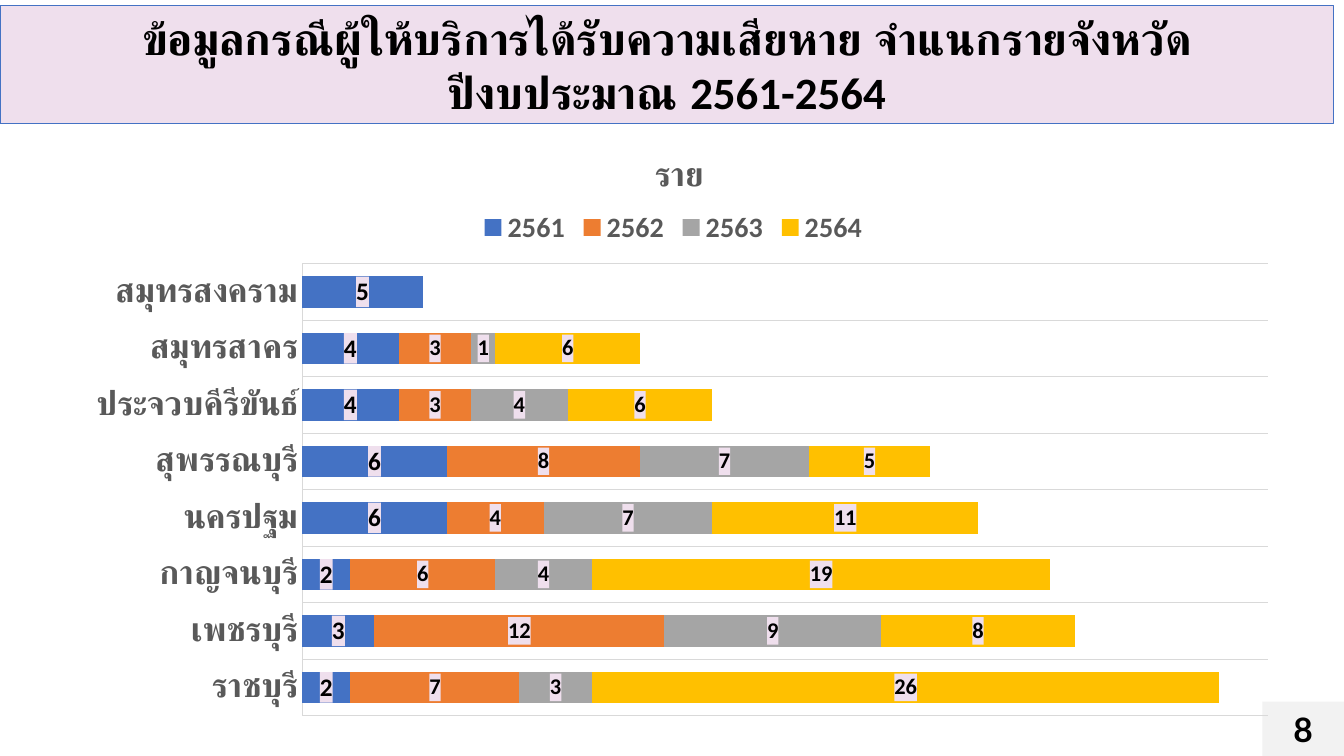
from dataclasses import dataclass

import pptx
import pptx.chart.data
import pptx.dml.color
import pptx.enum.chart
import pptx.enum.shapes
import pptx.enum.text
import pptx.oxml
import pptx.oxml.ns
import pptx.util

COLORS = {
    "black": "000000", "pink": "EFDFED", "blue": "4472C4", "orange": "ED7D31",
    "gray": "A5A5A5", "yellow": "FFC000", "text": "595959", "rule": "D9D9D9",
    "page": "F2F2F2",
}
WIDTH, HEIGHT = pptx.util.Inches(13.33), pptx.util.Inches(7.5)
TITLE = "ข้อมูลกรณีผู้ให้บริการได้รับความเสียหาย จำแนกรายจังหวัด\nปีงบประมาณ 2561-2564"
PROVINCES = ["ราชบุรี", "เพชรบุรี", "กาญจนบุรี", "นครปฐม", "สุพรรณบุรี",
             "ประจวบคีรีขันธ์", "สมุทรสาคร", "สมุทรสงคราม"]


@dataclass
class Box:
    """A rectangle in inches, from the slide's top left corner."""
    left: float
    top: float
    width: float
    height: float

    def emu(self) -> list[int]:
        return [pptx.util.Inches(v) for v in (self.left, self.top, self.width, self.height)]


@dataclass
class Year:
    name: str
    color: str
    label_size: int
    cases: list


TITLE_BOX = Box(0, 0.05, 13.23, 1.18)
PAGE_BOX = Box(12.52, 6.96, 0.81, 0.54)
CHART_BOX = Box(0.54, 1.24, 12.28, 5.98)
YEARS = [
    Year("2561", "blue", 18, [2, 3, 2, 6, 6, 4, 4, 5]),
    Year("2562", "orange", 16, [7, 12, 6, 4, 8, 3, 3, None]),
    Year("2563", "gray", 16, [3, 9, 4, 7, 7, 4, 1, None]),
    Year("2564", "yellow", 16, [26, 8, 19, 11, 5, 6, 6, None]),
]


def rgb(name: str) -> pptx.dml.color.RGBColor:
    return pptx.dml.color.RGBColor.from_string(COLORS[name])


def paint(fill, color: str) -> None:
    fill.solid()
    fill.fore_color.rgb = rgb(color)


def set_font(font, size: int, color: str, name: str = "Calibri") -> None:
    font.size = pptx.util.Pt(size)
    font.bold = True
    font.name = name
    font.color.rgb = rgb(color)


def set_line(line, color: str) -> None:
    line.color.rgb = rgb(color)
    line.width = pptx.util.Pt(0.75)


def write(sp, text: str, size: int, name: str) -> None:
    """Fill a shape with centred bold black text."""
    tf = sp.text_frame
    tf.text = text
    tf.word_wrap = True
    tf.auto_size = pptx.enum.text.MSO_AUTO_SIZE.NONE
    tf.vertical_anchor = pptx.enum.text.MSO_ANCHOR.MIDDLE
    for p in tf.paragraphs:
        p.alignment = pptx.enum.text.PP_ALIGN.CENTER
        p.line_spacing = 1.0
        for r in p.runs:
            set_font(r.font, size, "black", name)


def set_layout(element, index: int, target: str = "", **shares: float) -> None:
    """Place a chart part by shares of the chart's size."""
    for old in element.findall(pptx.oxml.ns.qn("c:layout")):
        element.remove(old)
    parts = {"layoutTarget": target} if target else {}
    parts |= {"xMode": "edge", "yMode": "edge", **shares}
    body = "".join(f'<c:{tag} val="{value}"/>' for tag, value in parts.items())
    element.insert(index, pptx.oxml.parse_xml(
        f'<c:layout {pptx.oxml.ns.nsdecls("c")}>'
        f"<c:manualLayout>{body}</c:manualLayout></c:layout>"))


def add_title(slide) -> None:
    sp = slide.shapes.title
    sp.left, sp.top, sp.width, sp.height = TITLE_BOX.emu()
    paint(sp.fill, "pink")
    set_line(sp.line, "blue")
    write(sp, TITLE, 32, "Calibri")


def add_page_number(slide) -> None:
    sp = slide.shapes.add_shape(pptx.enum.shapes.MSO_SHAPE.RECTANGLE, *PAGE_BOX.emu())
    sp.shadow.inherit = False
    paint(sp.fill, "page")
    sp.line.fill.background()
    write(sp, "8", 24, "Lato")


def format_series(series, year: Year) -> None:
    paint(series.format.fill, year.color)
    labels = series.data_labels
    labels.show_value = True
    set_font(labels.font, year.label_size, "black")
    label_fill = pptx.oxml.parse_xml(
        f'<c:spPr {pptx.oxml.ns.nsdecls("c", "a")}><a:solidFill>'
        f'<a:srgbClr val="{COLORS["pink"]}"/></a:solidFill></c:spPr>')
    labels._element.find(pptx.oxml.ns.qn("c:txPr")).addprevious(label_fill)


def format_axes(chart) -> None:
    provinces, cases = chart.category_axis, chart.value_axis
    provinces.major_tick_mark = pptx.enum.chart.XL_TICK_MARK.NONE
    provinces.has_major_gridlines = True
    set_line(provinces.major_gridlines.format.line, "rule")
    set_line(provinces.format.line, "rule")
    set_font(provinces.tick_labels.font, 24, "text")
    cases.has_major_gridlines = False
    cases.minimum_scale, cases.maximum_scale = 0, 40
    cases.visible = False


def add_cases_chart(slide) -> None:
    data = pptx.chart.data.CategoryChartData()
    data.categories = PROVINCES
    for year in YEARS:
        data.add_series(year.name, year.cases)
    chart = slide.shapes.add_chart(
        pptx.enum.chart.XL_CHART_TYPE.BAR_STACKED, *CHART_BOX.emu(), data).chart
    set_font(chart.font, 16, "black", "Lato")

    chart.has_title = True
    chart.chart_title.text_frame.text = "ราย"
    set_font(chart.chart_title.text_frame.paragraphs[0].runs[0].font, 24, "text")
    set_layout(chart.chart_title._element, 1, x=0.48, y=0.04)

    chart.has_legend = True
    chart.legend.position = pptx.enum.chart.XL_LEGEND_POSITION.TOP
    chart.legend.include_in_layout = False
    set_font(chart.legend.font, 20, "text")
    set_layout(chart.legend._element, 1, x=0.34, y=0.14, w=0.32, h=0.06)

    plot = chart.plots[0]
    plot.gap_width, plot.overlap = 79, 100
    plot.vary_by_categories = False
    for series, year in zip(plot.series, YEARS):
        format_series(series, year)
    format_axes(chart)
    plot_area = chart._chartSpace.find(".//" + pptx.oxml.ns.qn("c:plotArea"))
    set_layout(plot_area, 0, "inner", x=0.2, y=0.23, w=0.78, h=0.75)


def main() -> None:
    prs = pptx.Presentation()
    prs.slide_width, prs.slide_height = WIDTH, HEIGHT
    slide = prs.slides.add_slide(prs.slide_layouts[5])
    add_title(slide)
    add_page_number(slide)
    add_cases_chart(slide)
    prs.save("out.pptx")


if __name__ == "__main__":
    main()
